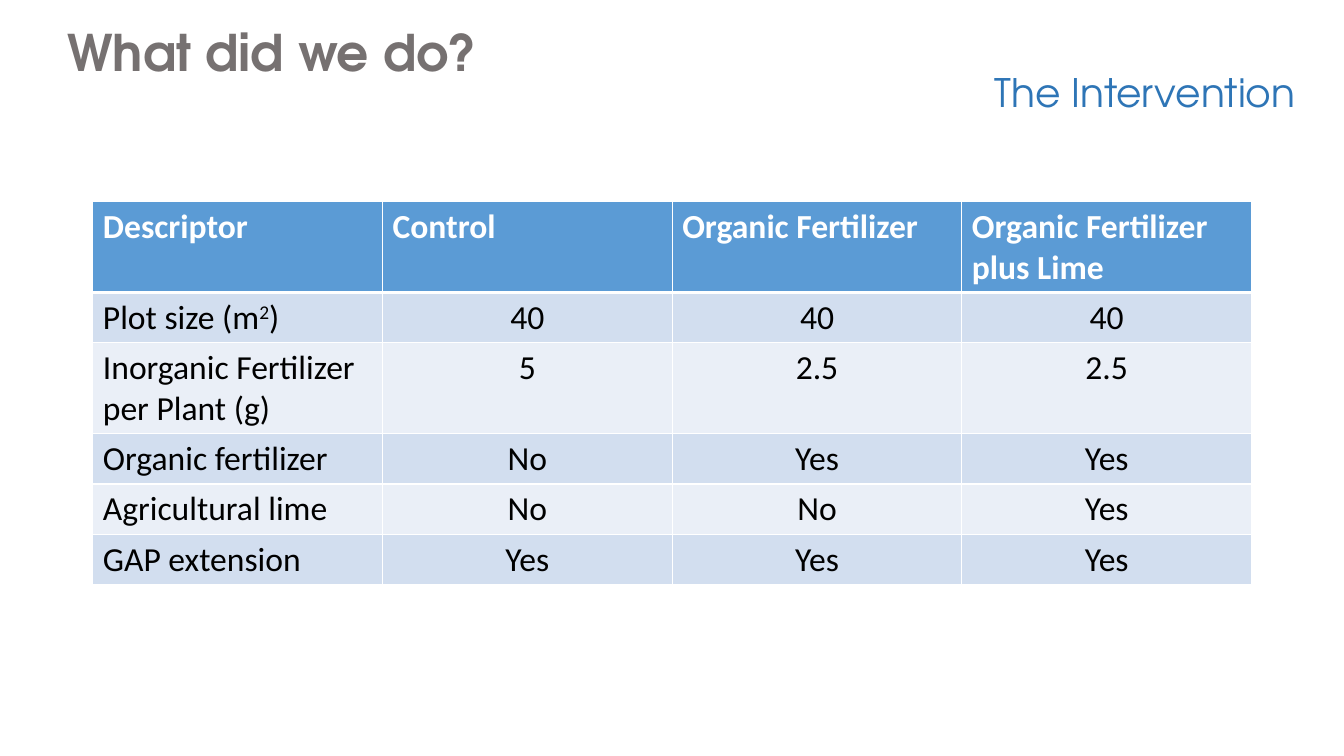
import pptx
import pptx.dml.color
import pptx.enum.text
import pptx.oxml.ns
import pptx.util
from lxml import etree

Cm = pptx.util.Cm
ALIGN = pptx.enum.text.PP_ALIGN

COLOURS = {
    "title": "767171",
    "subtitle": "2E75B6",
    "header": "5B9BD5",
    "odd_row": "D2DEEF",
    "even_row": "EAEFF7",
    "border": "FFFFFF",
    "header_text": "FFFFFF",
    "body_text": "000000",
}
HEADING_FONT = "TeX Gyre Adventor"
TABLE_FONT = "Calibri"
COLUMN_WIDTH = 7.3
ONE_LINE, TWO_LINES = 1.27, 2.28

# Each row: its height, then its cells; "^" sets off a superscript.
TREATMENTS = [
    (TWO_LINES, ["Descriptor", "Control", "Organic Fertilizer", "Organic Fertilizer plus Lime"]),
    (ONE_LINE, ["Plot size (m^2^)", "40", "40", "40"]),
    (TWO_LINES, ["Inorganic Fertilizer per Plant (g)", "5", "2.5", "2.5"]),
    (ONE_LINE, ["Organic fertilizer", "No", "Yes", "Yes"]),
    (ONE_LINE, ["Agricultural lime", "No", "No", "Yes"]),
    (ONE_LINE, ["GAP extension", "Yes", "Yes", "Yes"]),
]


def rgb(name):
    return pptx.dml.color.RGBColor.from_string(COLOURS[name])


def write(paragraph, text, colour, align, **font_format):
    """Fill a paragraph, raising every part between a pair of "^" marks."""
    paragraph.alignment = align
    for position, part in enumerate(text.split("^")):
        if not part:
            continue
        run = paragraph.add_run()
        run.text = part
        for name, value in font_format.items():
            setattr(run.font, name, value)
        run.font.color.rgb = rgb(colour)
        if position % 2:
            run.font._element.set("baseline", "30000")


def add_heading(slide, text, top, height, colour, size, align, bold):
    box = slide.shapes.add_textbox(Cm(1.45), Cm(top), Cm(31.45), Cm(height))
    box.text_frame.word_wrap = True
    write(box.text_frame.paragraphs[0], text, colour, align,
          name=HEADING_FONT, size=pptx.util.Pt(size), bold=bold)


def add_borders(cell, top, bottom):
    """Draw the four cell edges; top and bottom are widths in points."""
    properties = cell._tc.get_or_add_tcPr()
    for side, width in (("L", 1), ("R", 1), ("T", top), ("B", bottom)):
        edge = etree.SubElement(properties, pptx.oxml.ns.qn(f"a:ln{side}"),
                                w=str(pptx.util.Pt(width)))
        fill = etree.SubElement(edge, pptx.oxml.ns.qn("a:solidFill"))
        etree.SubElement(fill, pptx.oxml.ns.qn("a:srgbClr"), val=COLOURS["border"])


def add_treatment_table(slide):
    column_count = len(TREATMENTS[0][1])
    total_height = sum(height for height, _ in TREATMENTS)
    table = slide.shapes.add_table(
        len(TREATMENTS), column_count, Cm(2.34), Cm(5.08),
        Cm(COLUMN_WIDTH * column_count), Cm(total_height)).table
    for column in table.columns:
        column.width = Cm(COLUMN_WIDTH)
    for r, (height, texts) in enumerate(TREATMENTS):
        table.rows[r].height = Cm(height)
        is_header = r == 0
        band = "header" if is_header else "odd_row" if r % 2 else "even_row"
        for c, text in enumerate(texts):
            cell = table.cell(r, c)
            add_borders(cell, top=3 if r == 1 else 1, bottom=3 if is_header else 1)
            cell.fill.solid()
            cell.fill.fore_color.rgb = rgb(band)
            write(cell.text_frame.paragraphs[0], text,
                  "header_text" if is_header else "body_text",
                  ALIGN.LEFT if is_header or c == 0 else ALIGN.CENTER,
                  name=TABLE_FONT, size=pptx.util.Pt(24), bold=is_header)


def main():
    deck = pptx.Presentation()
    deck.slide_width, deck.slide_height = Cm(33.87), Cm(19.05)
    slide = deck.slides.add_slide(deck.slide_layouts[6])
    add_heading(slide, "What did we do?", 0.41, 1.8, "title", 36, ALIGN.LEFT, True)
    add_heading(slide, "The Intervention", 1.6, 1.45, "subtitle", 28, ALIGN.RIGHT, False)
    add_treatment_table(slide)
    deck.save("out.pptx")


if __name__ == "__main__":
    main()
